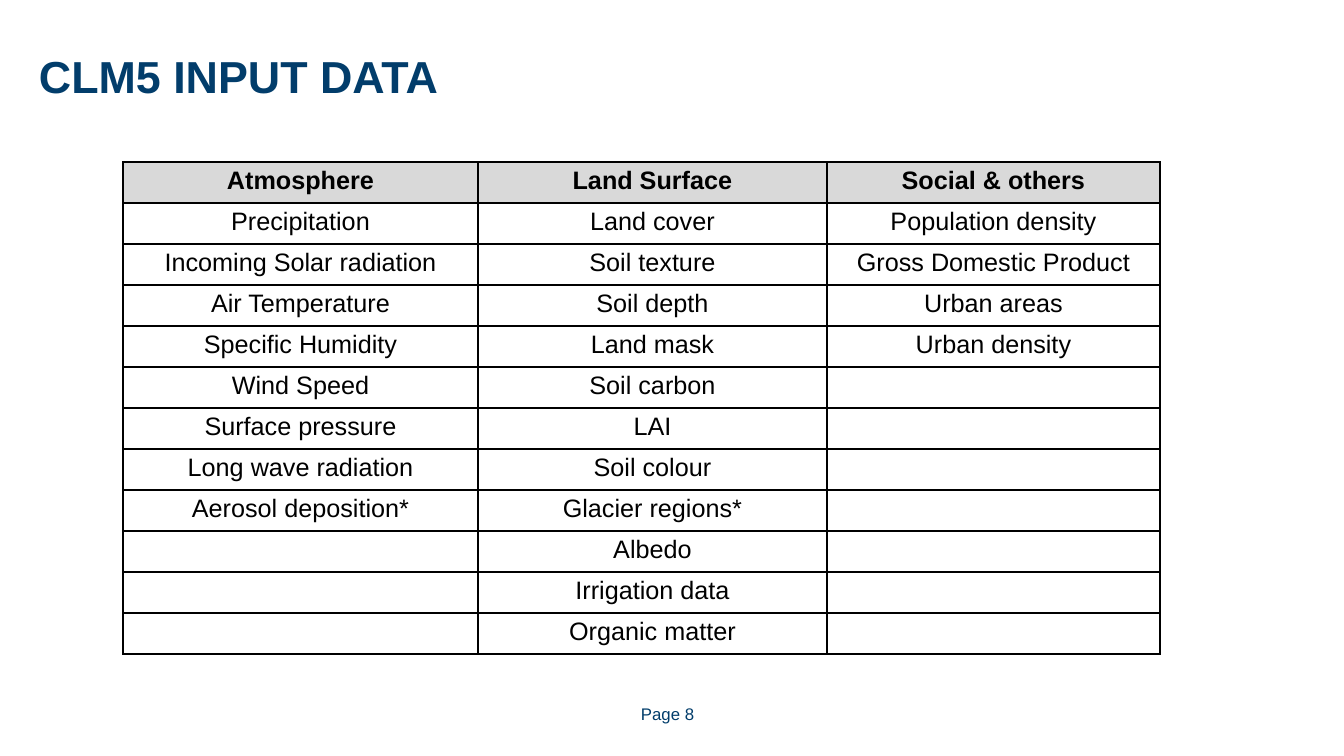
from itertools import zip_longest

from lxml import etree
from pptx import Presentation
from pptx import util as u
from pptx.dml.color import RGBColor
from pptx.enum import text
from pptx.oxml import ns

PX = 914400 / 100.8
NAVY = RGBColor(0x02, 0x3D, 0x6B)
BLACK = RGBColor(0, 0, 0)
GREY = RGBColor(0xD9, 0xD9, 0xD9)
FONT = "Arial"

WIDTHS = [355, 349, 333]
ROW = 41
INPUTS = {
    "Atmosphere": [
        "Precipitation", "Incoming Solar radiation", "Air Temperature",
        "Specific Humidity", "Wind Speed", "Surface pressure",
        "Long wave radiation", "Aerosol deposition*",
    ],
    "Land Surface": [
        "Land cover", "Soil texture", "Soil depth", "Land mask",
        "Soil carbon", "LAI", "Soil colour", "Glacier regions*",
        "Albedo", "Irrigation data", "Organic matter",
    ],
    "Social & others": [
        "Population density", "Gross Domestic Product", "Urban areas",
        "Urban density",
    ],
}


def px(n):
    return u.Emu(round(n * PX))


def style(para, size, color, bold=False):
    for run in para.runs:
        run.font.name = FONT
        run.font.size = u.Pt(size)
        run.font.bold = bold
        run.font.color.rgb = color


def label(slide, words, box, size, bold=False, inset=0, spacing=1.0):
    frame = slide.shapes.add_textbox(*map(px, box)).text_frame
    frame.word_wrap = True
    frame.margin_left = frame.margin_right = frame.margin_bottom = 0
    frame.margin_top = px(inset)
    frame.text = words
    para = frame.paragraphs[0]
    para.line_spacing = spacing
    style(para, size, NAVY, bold)


def border(cell):
    props = cell._tc.get_or_add_tcPr()
    for spot, side in enumerate(("lnL", "lnR", "lnT", "lnB")):
        line = etree.Element(ns.qn("a:" + side), w=str(u.Pt(1)))
        fill = etree.SubElement(line, ns.qn("a:solidFill"))
        etree.SubElement(fill, ns.qn("a:srgbClr"), val=str(BLACK))
        props.insert(spot, line)


def fill_cell(cell, words, head):
    if head:
        cell.fill.solid()
        cell.fill.fore_color.rgb = GREY
    else:
        cell.fill.background()
    border(cell)
    if words:
        cell.text_frame.text = words
        para = cell.text_frame.paragraphs[0]
        para.alignment = text.PP_ALIGN.CENTER
        style(para, 18, BLACK, head)


def grid(slide, left, top):
    rows = [list(INPUTS), *zip_longest(*INPUTS.values(), fillvalue="")]
    size = (sum(WIDTHS), ROW * len(rows))
    frame = slide.shapes.add_table(
        len(rows), len(WIDTHS), *map(px, (left, top, *size)))
    table = frame.table
    table.horz_banding = False
    for col, width in zip(table.columns, WIDTHS):
        col.width = px(width)
    for r, row in enumerate(rows):
        table.rows[r].height = px(ROW)
        for c, words in enumerate(row):
            fill_cell(table.cell(r, c), words, r == 0)


def main():
    deck = Presentation()
    deck.slide_width, deck.slide_height = px(1344), px(756)
    slide = deck.slides.add_slide(deck.slide_layouts[6])
    label(slide, "CLM5 INPUT DATA", (39, 35, 1262, 124), 32, True, 6, 1.14)
    grid(slide, 123, 162)
    label(slide, "Page 8", (641, 704, 80, 24), 12)
    deck.save("out.pptx")


if __name__ == "__main__":
    main()
